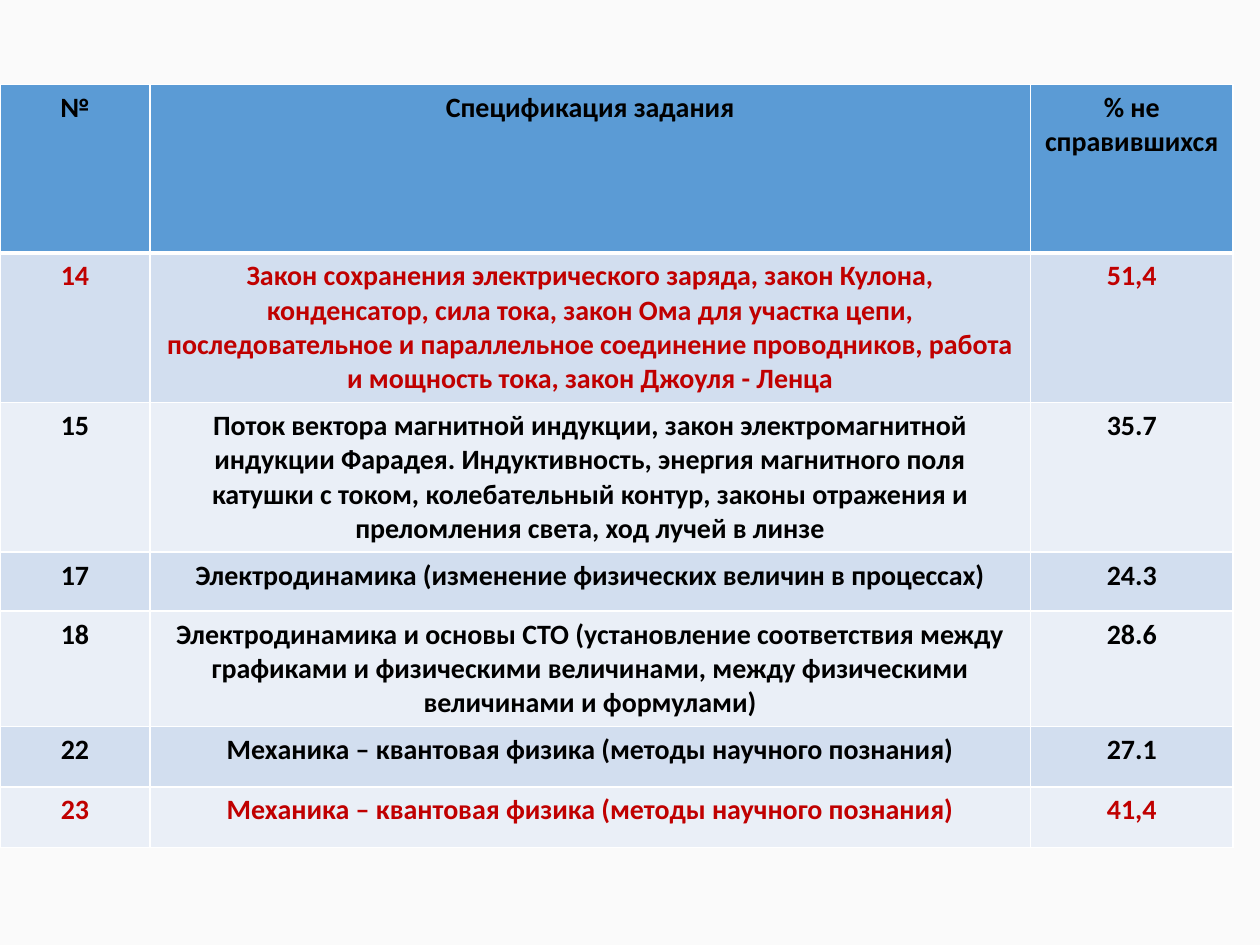
from lxml import etree
from pptx import Presentation
from pptx import util as u
from pptx.dml.color import RGBColor
from pptx.enum import text
from pptx.oxml import ns

COLOURS = {
    "page": "FAFAFA",
    "header": "5B9BD5",
    "odd": "D2DEEF",
    "even": "EAEFF7",
    "line": "FFFFFF",
    "plain": "000000",
    "weak": "C00000",
}
FONT = {"name": "Calibri", "size": u.Pt(16), "bold": True}
COLUMN_WIDTHS = [3.02, 17.75, 4.09]
ROW_HEIGHTS = [3.4, 2.82, 2.29, 1.19, 1.45, 1.22, 1.22]
TASKS = [
    ("№", "Спецификация задания", "% не справившихся"),
    ("14", "Закон сохранения электрического заряда, закон Кулона, конденсатор, "
           "сила тока, закон Ома для участка цепи, последовательное и параллельное "
           "соединение проводников, работа и мощность тока, закон Джоуля - Ленца", "51,4"),
    ("15", "Поток вектора магнитной индукции, закон электромагнитной индукции Фарадея. "
           "Индуктивность, энергия магнитного поля катушки с током, колебательный контур, "
           "законы отражения и преломления света, ход лучей в линзе", "35.7"),
    ("17", "Электродинамика (изменение физических величин в процессах)", "24.3"),
    ("18", "Электродинамика и основы СТО (установление соответствия между графиками "
           "и физическими величинами, между физическими величинами и формулами)", "28.6"),
    ("22", "Механика – квантовая физика (методы научного познания)", "27.1"),
    ("23", "Механика – квантовая физика (методы научного познания)", "41,4"),
]
WEAK_TASKS = {"14", "23"}


def colour(name):
    return RGBColor.from_string(COLOURS[name])


def add_borders(cell, widths):
    properties = cell._tc.get_or_add_tcPr()
    for side in ("L", "R", "T", "B"):
        line = etree.SubElement(properties, ns.qn(f"a:ln{side}"), w=str(u.Pt(widths.get(side, 1))))
        fill = etree.SubElement(line, ns.qn("a:solidFill"))
        etree.SubElement(fill, ns.qn("a:srgbClr"), val=COLOURS["line"])


def fill_cell(cell, words, fill, ink, borders):
    add_borders(cell, borders)
    cell.fill.solid()
    cell.fill.fore_color.rgb = colour(fill)
    para = cell.text_frame.paragraphs[0]
    para.alignment = text.PP_ALIGN.CENTER
    span = para.add_run()
    span.text = words
    for attribute, value in FONT.items():
        setattr(span.font, attribute, value)
    span.font.color.rgb = colour(ink)


def add_task_table(page, left, top, width, height):
    box = page.shapes.add_table(len(TASKS), len(COLUMN_WIDTHS),
                                u.Cm(left), u.Cm(top), u.Cm(width), u.Cm(height))
    table = box.table
    for column, share in zip(table.columns, COLUMN_WIDTHS):
        column.width = u.Cm(width * share / sum(COLUMN_WIDTHS))
    for row, row_height in zip(table.rows, ROW_HEIGHTS):
        row.height = u.Cm(row_height)
    for index, task in enumerate(TASKS):
        fill = "header" if index == 0 else ("even", "odd")[index % 2]
        ink = "weak" if task[0] in WEAK_TASKS else "plain"
        borders = {0: {"B": 3}, 1: {"T": 3}}.get(index, {})
        for cell, words in zip(table.rows[index].cells, task):
            fill_cell(cell, words, fill, ink, borders)


def main():
    deck = Presentation()
    deck.slide_width, deck.slide_height = u.Cm(25.4), u.Cm(19.05)
    page = deck.slides.add_slide(deck.slide_layouts[6])
    page.background.fill.solid()
    page.background.fill.fore_color.rgb = colour("page")
    add_task_table(page, 0, 1.7, 24.86, 15.29)
    deck.save("out.pptx")


if __name__ == "__main__":
    main()
